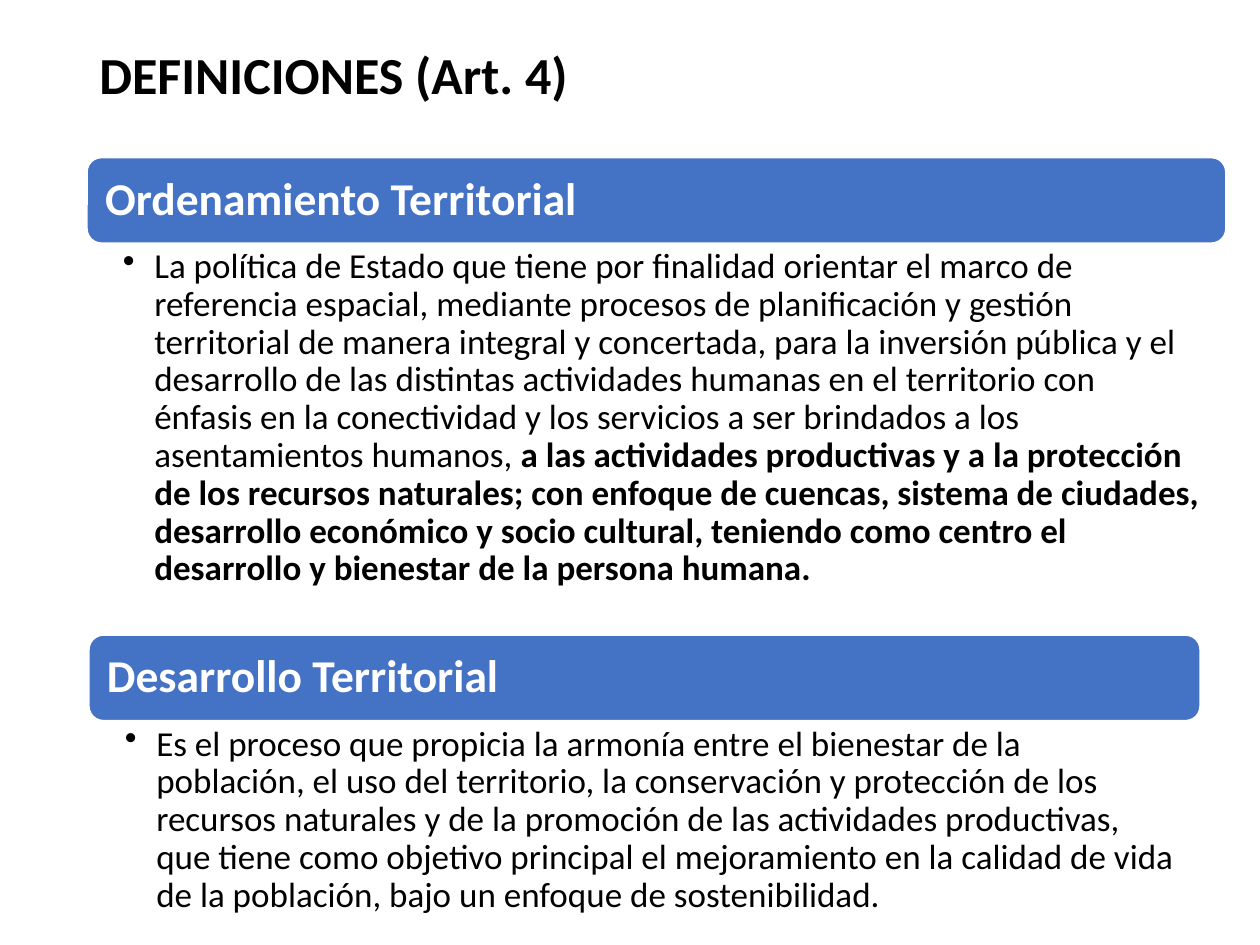
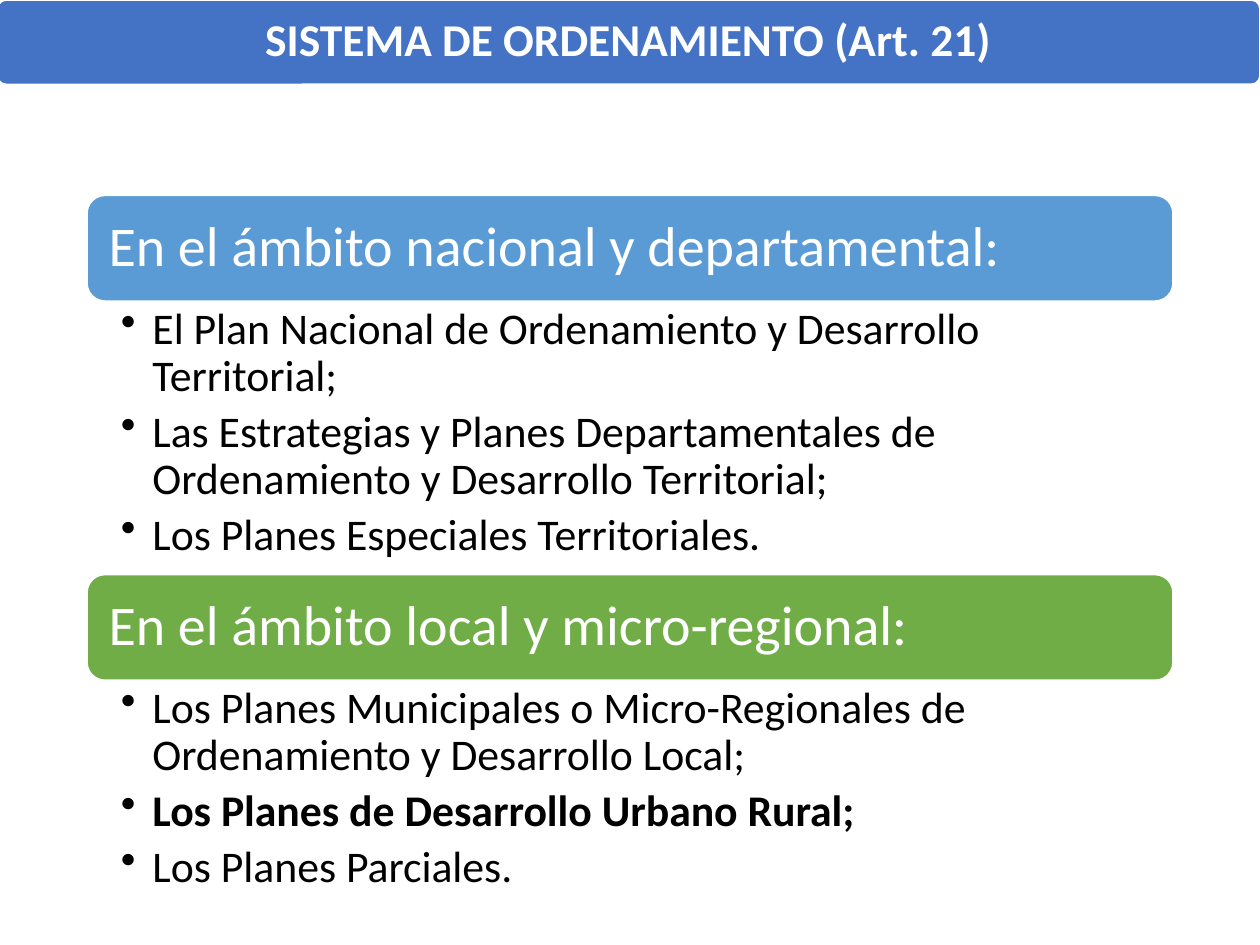
"""Builds two slides on land planning: definitions and the planning system."""
from lxml import etree
from pptx import Presentation, util as u
from pptx.dml.color import RGBColor
from pptx.enum import shapes, text
from pptx.oxml.ns import qn

deck = Presentation()
deck.slide_width, deck.slide_height = u.Inches(10), u.Inches(7.5)
COL, ROW = deck.slide_width / 100, deck.slide_height / 100
BLUE, SKY, GREEN = "4472C4", "5B9BD5", "70AD47"
WHITE, BLACK = "FFFFFF", "000000"
LEFT, MID = text.PP_ALIGN.LEFT, text.PP_ALIGN.CENTER
TOP, HALF = text.MSO_ANCHOR.TOP, text.MSO_ANCHOR.MIDDLE


def place(slide, box, fill=None, curve=0.17):
    x, y, w, h = box
    area = [int(x * COL), int(y * ROW), int(w * COL), int(h * ROW)]
    if not fill:
        return slide.shapes.add_textbox(*area)
    band = slide.shapes.add_shape(shapes.MSO_SHAPE.ROUNDED_RECTANGLE, *area)
    band.adjustments[0] = curve
    band.shadow.inherit = False
    for part, tone in ((band.fill, fill), (band.line.fill, WHITE)):
        part.solid()
        part.fore_color.rgb = RGBColor.from_string(tone)
    band.line.width = u.Pt(1)
    return band


def write(shape, paras, size, tone, pads, after=0, anchor=HALF, align=LEFT, dots=False):
    frame = shape.text_frame
    look = {"word_wrap": True, "vertical_anchor": anchor}
    sides = ("left", "top", "right", "bottom")
    look.update({f"margin_{s}": int(p * COL) for s, p in zip(sides, pads)})
    for key, val in look.items():
        setattr(frame, key, val)
    for i, runs in enumerate(paras):
        para = frame.add_paragraph() if i else frame.paragraphs[0]
        form = {"alignment": align, "line_spacing": 0.9, "space_after": u.Pt(size * after)}
        for key, val in form.items():
            setattr(para, key, val)
        if dots:
            para.level = 1
            props = para._p.get_or_add_pPr()
            props.set("marL", str(int(2.5 * COL)))
            props.set("indent", str(int(-2.5 * COL)))
            etree.SubElement(props, qn("a:buChar"), char="•")
        for words, bold in runs:
            run = para.add_run()
            run.text = words
            font = {"name": "Calibri", "size": u.Pt(size), "bold": bold}
            for key, val in font.items():
                setattr(run.font, key, val)
            run.font.color.rgb = RGBColor.from_string(tone)


terms, system = [deck.slides.add_slide(deck.slide_layouts[6]) for _ in range(2)]

write(place(terms, (6.9, 5.33, 86.2, 5.87)), [[("DEFINICIONES (Art. 4)", True)]],
      29.7, BLACK, (1, 0.5, 1, 0.5))
write(place(system, (-0.2, 0, 100.2, 8.93), BLUE, 0.1),
      [[("SISTEMA DE ORDENAMIENTO (Art. 21)", True)]],
      26, WHITE, [1.1] * 4, align=MID)

term_look = dict(high=9.07, head=26, bold=True, size=20, pad=1.1, ins=(2.85, 0.4, 2, 0.4))
plan_look = dict(high=11.2, head=32, bold=False, size=25, pad=1.3, ins=(2.7, 0.4, 2.5, 0.4))
parts = [
    (terms, term_look, 6.9, 16.67, 90.4, 37.73, BLUE, "Ordenamiento Territorial", [[
        ("La política de Estado que tiene por finalidad orientar el marco de referencia "
         "espacial, mediante procesos de planificación y gestión territorial de manera "
         "integral y concertada, para la inversión pública y el desarrollo de las distintas "
         "actividades humanas en el territorio con énfasis en la conectividad y los "
         "servicios a ser brindados a los asentamientos humanos, ", False),
        ("a las actividades productivas y a la protección de los recursos naturales; con "
         "enfoque de cuencas, sistema de ciudades, desarrollo económico y socio cultural, "
         "teniendo como centro el desarrollo y bienestar de la persona humana.", True)]]),
    (terms, term_look, 7.05, 67.2, 88.2, 21.6, BLUE, "Desarrollo Territorial", [[
        ("Es el proceso que propicia la armonía entre el bienestar de la población, el uso "
         "del territorio, la conservación y protección de los recursos naturales y de la "
         "promoción de las actividades productivas, que tiene como objetivo principal el "
         "mejoramiento en la calidad de vida de la población, bajo un enfoque de "
         "sostenibilidad.", False)]]),
    (system, plan_look, 6.9, 20.67, 86.2, 28.93, SKY,
     "En el ámbito nacional y departamental:", [
        [("El Plan Nacional de Ordenamiento y Desarrollo Territorial;", False)],
        [("Las Estrategias y Planes Departamentales de Ordenamiento y Desarrollo "
          "Territorial;", False)],
        [("Los Planes Especiales Territoriales.", False)]]),
    (system, plan_look, 6.9, 60.8, 86.2, 24.13, GREEN,
     "En el ámbito local y micro-regional:", [
        [("Los Planes Municipales o Micro-Regionales de Ordenamiento y Desarrollo "
          "Local;", False)],
        [("Los Planes de Desarrollo Urbano Rural;", True)],
        [("Los Planes Parciales.", False)]]),
]
for slide, look, x, y, w, deep, fill, head, paras in parts:
    band = place(slide, (x, y, w, look["high"]), fill)
    write(band, [[(head, look["bold"])]], look["head"], WHITE, [look["pad"]] * 4)
    body = place(slide, (x, y + look["high"], w, deep))
    write(body, paras, look["size"], BLACK, look["ins"], 0.2, TOP, dots=True)

deck.save("out.pptx")
